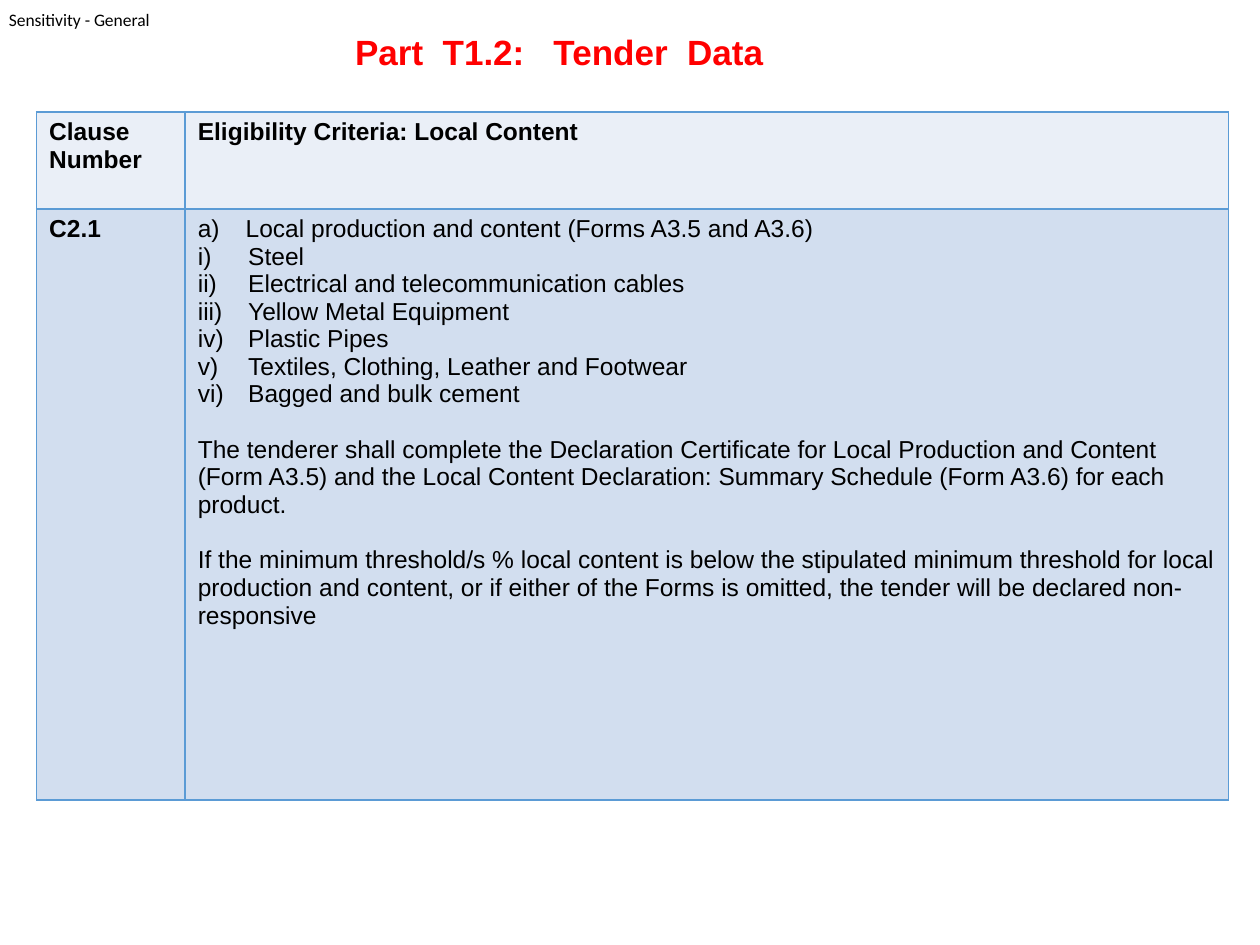
from pptx import Presentation
from pptx.dml.color import RGBColor
from pptx.enum.text import PP_ALIGN
from pptx.oxml import parse_xml
from pptx.oxml.ns import nsdecls
from pptx.util import Inches, Pt


def style(paragraph, size, color="000000", bold=False, name="Arial"):
    for run in paragraph.runs:
        run.font.name = name
        run.font.size = Pt(size)
        run.font.bold = bold
        run.font.color.rgb = RGBColor.from_string(color)


def add_number(paragraph, scheme, indent, tab=False):
    properties = paragraph._p.get_or_add_pPr()
    properties.set("marL", str(Inches(indent)))
    properties.set("indent", str(-Inches(indent)))
    properties.append(parse_xml(f'<a:buFont {nsdecls("a")} typeface="+mj-lt"/>'))
    properties.append(parse_xml(f'<a:buAutoNum {nsdecls("a")} type="{scheme}"/>'))
    if tab:
        properties.append(parse_xml(
            f'<a:tabLst {nsdecls("a")}><a:tab pos="{Inches(indent)}" algn="l"/></a:tabLst>'))


presentation = Presentation()
presentation.slide_width = Inches(10)
presentation.slide_height = Inches(7.5)
slide = presentation.slides.add_slide(presentation.slide_layouts[6])

# Sensitivity label
label = slide.shapes.add_textbox(Inches(0.07), Inches(0.07), Inches(1.15), Inches(0.17))
text_frame = label.text_frame
text_frame.margin_left = text_frame.margin_right = 0
text_frame.margin_top = text_frame.margin_bottom = 0
text_frame.word_wrap = False
text_frame.text = "Sensitivity - General"
style(text_frame.paragraphs[0], 10, name="Calibri")

# Title
title = slide.shapes.add_textbox(Inches(2.71), Inches(0.19), Inches(3.46), Inches(0.44))
title.text_frame.word_wrap = False
title.text_frame.text = "Part  T1.2:   Tender  Data"
title.text_frame.paragraphs[0].alignment = PP_ALIGN.CENTER
style(title.text_frame.paragraphs[0], 20, "FF0000", bold=True)

# Criteria table
local_content = "Local production and content (Forms A3.5 and A3.6)"
products = [
    "Steel",
    "Electrical and telecommunication cables",
    "Yellow Metal Equipment",
    "Plastic Pipes",
    "Textiles, Clothing, Leather and Footwear",
    "Bagged and bulk cement",
]
conditions = [
    "The tenderer shall complete the Declaration Certificate for Local Production and Content "
    "(Form A3.5) and the Local Content Declaration: Summary Schedule (Form A3.6) for each product.",
    "If the minimum threshold/s % local content is below the stipulated minimum threshold for local "
    "production and content, or if either of the Forms is omitted, the tender will be declared "
    "non-responsive",
]
rows = [
    (0.77, "EAEFF7", ["Clause\nNumber", "Eligibility Criteria: Local Content"]),
    (4.69, "D2DEEF", ["C2.1", "\n".join([local_content, *products, *conditions])]),
]
table = slide.shapes.add_table(2, 2, Inches(0.29), Inches(0.89), Inches(9.46), Inches(5.46)).table
for column, width in zip(table.columns, (1.18, 8.28)):
    column.width = Inches(width)

for row, (height, fill, texts) in zip(table.rows, rows):
    row.height = Inches(height)
    for cell, text in zip(row.cells, texts):
        cell.text_frame.text = text
        for paragraph in cell.text_frame.paragraphs:
            style(paragraph, 14, bold=True)
        for side in ("lnL", "lnR", "lnT", "lnB"):
            cell._tc.get_or_add_tcPr().append(parse_xml(
                f'<a:{side} {nsdecls("a")} w="{Pt(1)}"><a:solidFill>'
                f'<a:srgbClr val="5B9BD5"/></a:solidFill></a:{side}>'))
        cell.fill.solid()
        cell.fill.fore_color.rgb = RGBColor.from_string(fill)

# Numbering and spacing of the criteria
paragraphs = table.cell(1, 1).text_frame.paragraphs
for paragraph in paragraphs:
    style(paragraph, 14)
add_number(paragraphs[0], "alphaLcParenR", 0.38)
for paragraph in paragraphs[1:1 + len(products)]:
    add_number(paragraph, "romanLcParenR", 0.4, tab=True)
for paragraph in paragraphs[-len(conditions):]:
    paragraph.space_before = Pt(16)

presentation.save("out.pptx")
